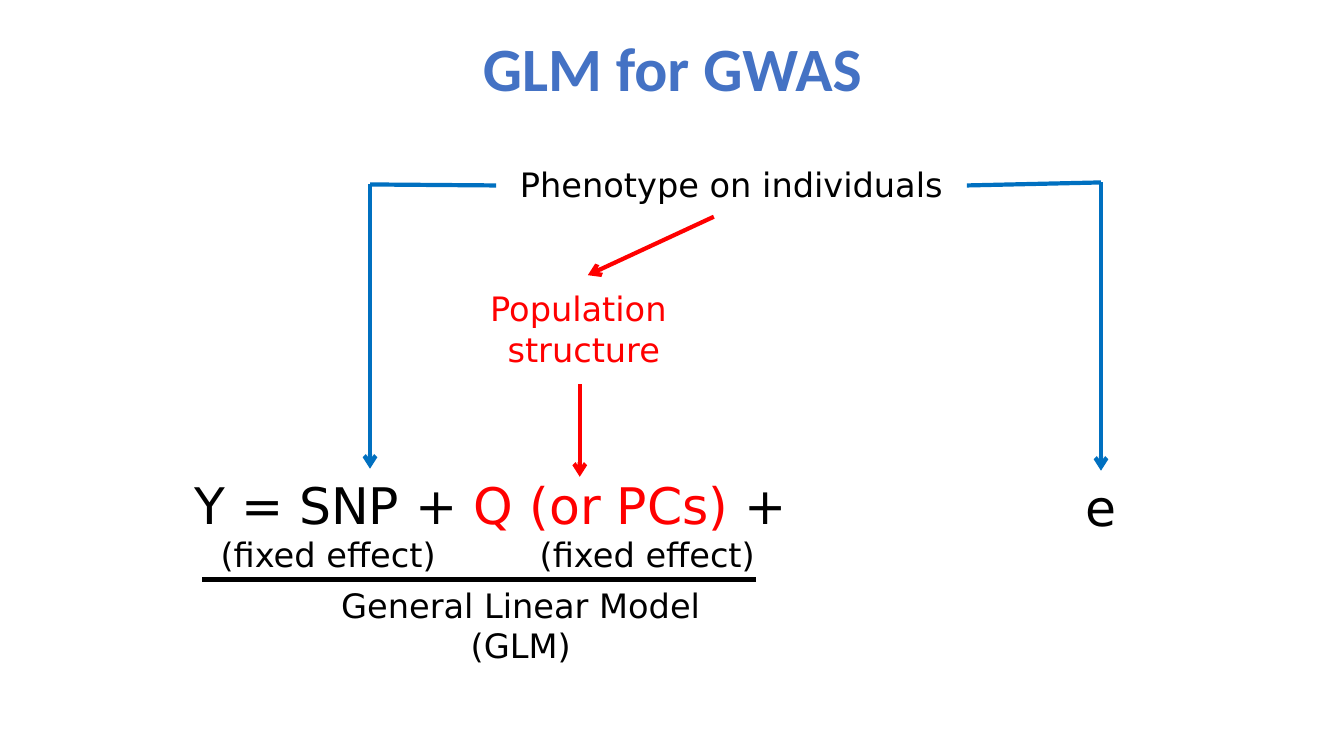
from lxml import etree
from pptx import Presentation
from pptx.dml.color import RGBColor
from pptx.enum.shapes import MSO_CONNECTOR
from pptx.enum.text import MSO_ANCHOR, MSO_AUTO_SIZE, PP_ALIGN
from pptx.oxml.ns import qn
from pptx.util import Inches, Pt

STRAIGHT = MSO_CONNECTOR.STRAIGHT
LEFT, CENTER = PP_ALIGN.LEFT, PP_ALIGN.CENTER
TOP, MIDDLE = MSO_ANCHOR.TOP, MSO_ANCHOR.MIDDLE
GROW, FIXED = MSO_AUTO_SIZE.SHAPE_TO_FIT_TEXT, MSO_AUTO_SIZE.NONE
TOP_SIDE, LEFT_SIDE, RIGHT_SIDE = 0, 1, 3

BLACK, RED, BLUE, TITLE_BLUE = "000000", "FF0000", "0070C0", "4472C4"


def rgb(hex_color):
    return RGBColor.from_string(hex_color)


def add_text(slide, text, box, size=24, font="DejaVu Sans", color=BLACK,
             bold=False, align=CENTER, anchor=TOP, auto_size=GROW,
             line_spacing=None):
    """Add a text box; text is a string or a list of (string, color) runs."""
    shape = slide.shapes.add_textbox(*map(Inches, box))
    frame = shape.text_frame
    frame.word_wrap = True
    frame.auto_size = auto_size
    frame.vertical_anchor = anchor
    if isinstance(text, str):
        paragraphs = [[(line, color)] for line in text.split("\n")]
    else:
        paragraphs = [text]
    for index, runs in enumerate(paragraphs):
        paragraph = frame.add_paragraph() if index else frame.paragraphs[0]
        paragraph.alignment = align
        paragraph.line_spacing = line_spacing
        for run_text, run_color in runs:
            run = paragraph.add_run()
            run.text = run_text
            run.font.size = Pt(size)
            run.font.name = font
            run.font.bold = bold
            run.font.color.rgb = rgb(run_color)
    return shape


def add_line(slide, start, end, color, arrow=False):
    connector = slide.shapes.add_connector(
        STRAIGHT, *map(Inches, (*start, *end)))
    connector.line.color.rgb = rgb(color)
    connector.line.width = Pt(3)
    if arrow:
        line = connector.line._get_or_add_ln()
        etree.SubElement(line, qn("a:tailEnd"), type="arrow")
    etree.SubElement(connector._element.spPr, qn("a:effectLst"))
    return connector


def main():
    presentation = Presentation()
    presentation.slide_width = Inches(13.33)
    presentation.slide_height = Inches(7.5)
    slide = presentation.slides.add_slide(presentation.slide_layouts[6])

    add_text(slide, "GLM for GWAS", (2.17, 0.08, 9, 1.25), size=44,
             font="Calibri", color=TITLE_BLUE, bold=True, anchor=MIDDLE,
             auto_size=FIXED, line_spacing=0.9)
    phenotype = add_text(slide, "Phenotype on individuals",
                         (4.92, 1.58, 4.67, 0.52))
    add_text(slide, "Population \nstructure", (4.75, 2.81, 2.08, 0.91),
             color=RED)

    equation = [("Y = SNP + ", BLACK), ("Q (or PCs)", RED), (" +", BLACK)]
    add_text(slide, equation, (1.83, 4.65, 8, 0.71), size=36, align=LEFT)
    error_term = add_text(slide, "e", (10.42, 4.67, 1, 0.71), size=36)
    for left, width in ((1.92, 2.67), (4.67, 3.5)):
        add_text(slide, "(fixed effect)", (left, 5.25, width, 0.51))
    add_text(slide, "General Linear Model (GLM)", (3, 5.75, 4.33, 0.91))
    add_line(slide, (7.5, 5.75), (2, 5.75), BLACK)

    add_line(slide, (7.08, 2.15), (5.83, 2.73), RED, arrow=True)
    add_line(slide, (5.75, 3.81), (5.75, 4.73), RED, arrow=True)

    snp_corner, error_corner = (3.67, 1.83), (10.92, 1.81)
    add_line(slide, snp_corner, (3.67, 4.65), BLUE, arrow=True)
    error_arrow = add_line(slide, error_corner, (10.92, 4.67), BLUE,
                           arrow=True)
    error_arrow.end_connect(error_term, TOP_SIDE)
    snp_branch = add_line(slide, (4.92, 1.84), snp_corner, BLUE)
    snp_branch.begin_connect(phenotype, LEFT_SIDE)
    error_branch = add_line(slide, error_corner, (9.59, 1.84), BLUE)
    error_branch.end_connect(phenotype, RIGHT_SIDE)

    presentation.save("out.pptx")


if __name__ == "__main__":
    main()
